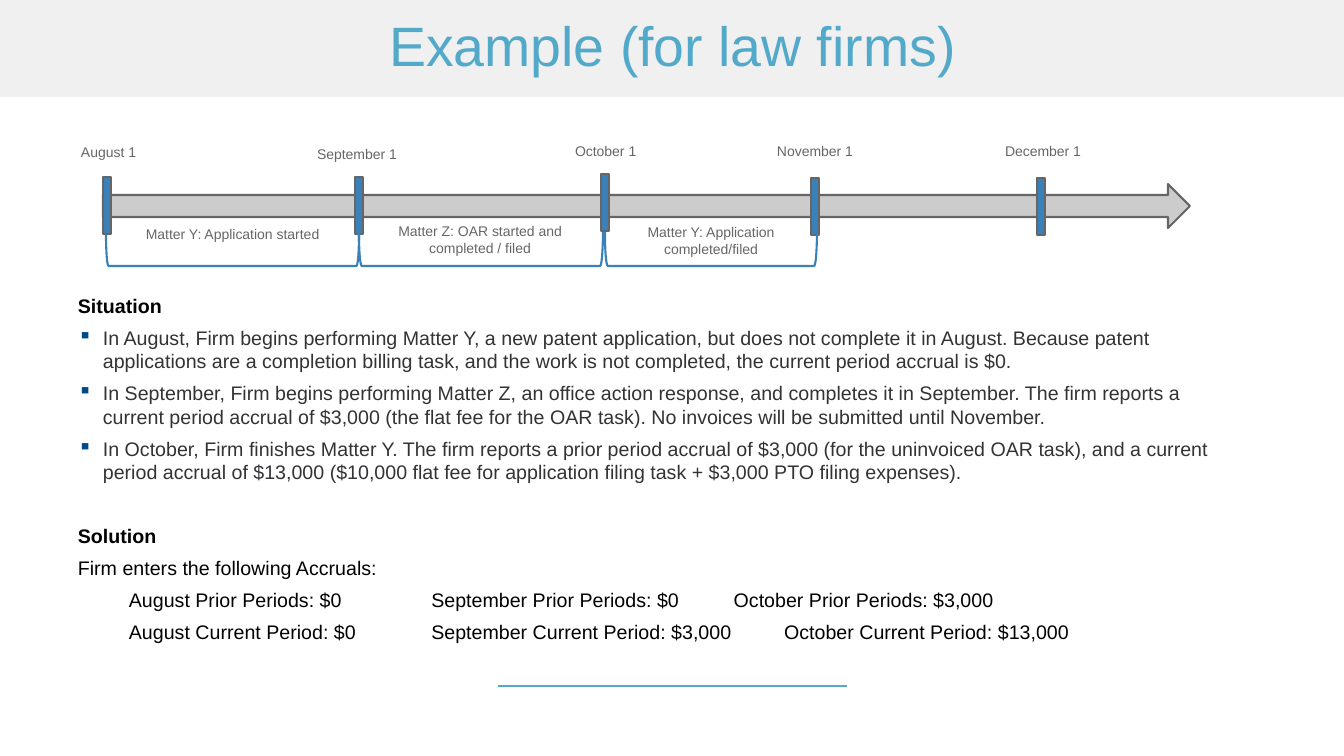
from lxml.etree import SubElement
from pptx import Presentation
from pptx.dml.color import RGBColor
from pptx.enum.shapes import MSO_CONNECTOR, MSO_SHAPE
from pptx.enum.text import MSO_ANCHOR, PP_ALIGN
from pptx.oxml.ns import qn
from pptx.util import Pt

SCALE = 914400 / 100.8
HUES = {
    "band": "F0F0F0", "sky": "53A9C9", "blue": "3A81BA", "navy": "004B87",
    "gray": "666666", "pale": "CCCCCC", "dark": "333336", "black": "000000",
}


def emu(px):
    return round(px * SCALE)


def hue(name):
    return RGBColor.from_string(HUES[name])


class Deck:
    font = "Arial"
    stroke = Pt(1.5)

    def __init__(self, wide, high):
        self.prs = Presentation()
        self.prs.slide_width, self.prs.slide_height = emu(wide), emu(high)
        self.slide = self.prs.slides.add_slide(self.prs.slide_layouts[6])

    def shape(self, kind, box, fill=None, line=None, turn=0):
        item = self.slide.shapes.add_shape(kind, *map(emu, box))
        item.shadow.inherit = False
        item.rotation = turn
        if fill:
            item.fill.solid()
            item.fill.fore_color.rgb = hue(fill)
        else:
            item.fill.background()
        if line:
            item.line.color.rgb = hue(line)
            item.line.width = self.stroke
        else:
            item.line.fill.background()

    def rule(self, ends, color):
        item = self.slide.shapes.add_connector(MSO_CONNECTOR.STRAIGHT, *map(emu, ends))
        item.line.color.rgb = hue(color)
        item.line.width = self.stroke
        SubElement(item._element.spPr, qn("a:effectLst"))

    def frame(self, box, pad=None, anchor=MSO_ANCHOR.TOP):
        frame = self.slide.shapes.add_textbox(*map(emu, box)).text_frame
        form = {"word_wrap": True, "vertical_anchor": anchor}
        if pad is not None:
            for side in ("left", "top", "right", "bottom"):
                form["margin_" + side] = emu(pad)
        for key, value in form.items():
            setattr(frame, key, value)
        return frame

    def para(self, frame, text, size, color, bold=False, indent=0, mark=None, **form):
        first = frame.paragraphs[0]
        para = frame.add_paragraph() if first.runs else first
        for key, value in form.items():
            setattr(para, key, value)
        prop = para._p.get_or_add_pPr()
        prop.set("marL", str(emu(indent)))
        prop.set("indent", str(emu(-indent if mark else 0)))
        if mark:
            tint = SubElement(prop, qn("a:buClr"))
            SubElement(tint, qn("a:srgbClr"), val=HUES["navy"])
            SubElement(prop, qn("a:buChar"), char=mark)
        run = para.add_run()
        run.text = text
        look = {"name": self.font, "size": Pt(size), "bold": bold}
        for key, value in look.items():
            setattr(run.font, key, value)
        run.font.color.rgb = hue(color)

    def label(self, text, box, align=PP_ALIGN.LEFT):
        self.para(self.frame(box, pad=13), text, 10, "gray", alignment=align)


def main():
    deck = Deck(1344, 756)

    # Title band and footer rule
    deck.rule((498, 686, 847, 686), "sky")
    deck.shape(MSO_SHAPE.RECTANGLE, (0, 0, 1344, 97), "band")
    title = deck.frame((93, 12, 1159, 74), anchor=MSO_ANCHOR.MIDDLE)
    deck.para(title, "Example (for law firms)", 39.6, "sky",
              alignment=PP_ALIGN.CENTER, line_spacing=0.9)

    # Situation and solution
    body = deck.frame((68, 289, 1184, 339))
    gap = {"space_after": Pt(6)}
    deck.para(body, "Situation", 14, "black", bold=True, **gap)
    for text in (
        "In August, Firm begins performing Matter Y, a new patent application, "
        "but does not complete it in August. Because patent applications are a "
        "completion billing task, and the work is not completed, the current "
        "period accrual is $0.",
        "In September, Firm begins performing Matter Z, an office action response, "
        "and completes it in September. The firm reports a current period accrual "
        "of $3,000 (the flat fee for the OAR task). No invoices will be submitted "
        "until November.",
        "In October, Firm finishes Matter Y. The firm reports a prior period accrual "
        "of $3,000 (for the uninvoiced OAR task), and a current period accrual of "
        "$13,000 ($10,000 flat fee for application filing task + $3,000 PTO filing "
        "expenses).",
    ):
        deck.para(body, text, 14, "dark", indent=25, mark="▪", **gap)
    deck.para(body, "Solution", 14, "black", bold=True, space_before=Pt(22.5), **gap)
    deck.para(body, "Firm enters the following Accruals:", 14, "black", **gap)
    for cells in (
        ("August Prior Periods: $0", "September Prior Periods: $0",
         "October Prior Periods: $3,000"),
        ("August Current Period: $0", "September Current Period: $3,000",
         "October Current Period: $13,000"),
    ):
        deck.para(body, "\t\t".join(cells), 14, "black", indent=51, **gap)

    # Timeline arrow with dated ticks
    deck.shape(MSO_SHAPE.RIGHT_ARROW, (103, 184, 1087, 44), "pale", "gray")
    for text, left, top, wide, tick, head in (
        ("August 1", 68, 135, 101, 103, 177),
        ("September 1", 304, 137, 109, 355, 177),
        ("October 1", 562, 134, 111, 601, 174),
        ("November 1", 764, 134, 105, 811, 178),
        ("December 1", 992, 134, 106, 1037, 178),
    ):
        deck.label(text, (left, top, wide, 35))
        deck.shape(MSO_SHAPE.RECTANGLE, (tick, head, 8, 57), "blue", "gray")

    # Work periods under the arrow
    for text, note, brace in (
        ("Matter Y: Application started", (121, 217, 223, 35), (217, 124, 31, 253)),
        ("Matter Z: OAR started and completed / filed", (362, 210, 236, 47),
         (464, 127, 34, 244)),
        ("Matter Y: Application completed/filed", (610, 211, 202, 50),
         (694, 143, 34, 212)),
    ):
        deck.label(text, note, PP_ALIGN.CENTER)
        deck.shape(MSO_SHAPE.LEFT_BRACKET, brace, line="blue", turn=270)

    deck.prs.save("out.pptx")


if __name__ == "__main__":
    main()
